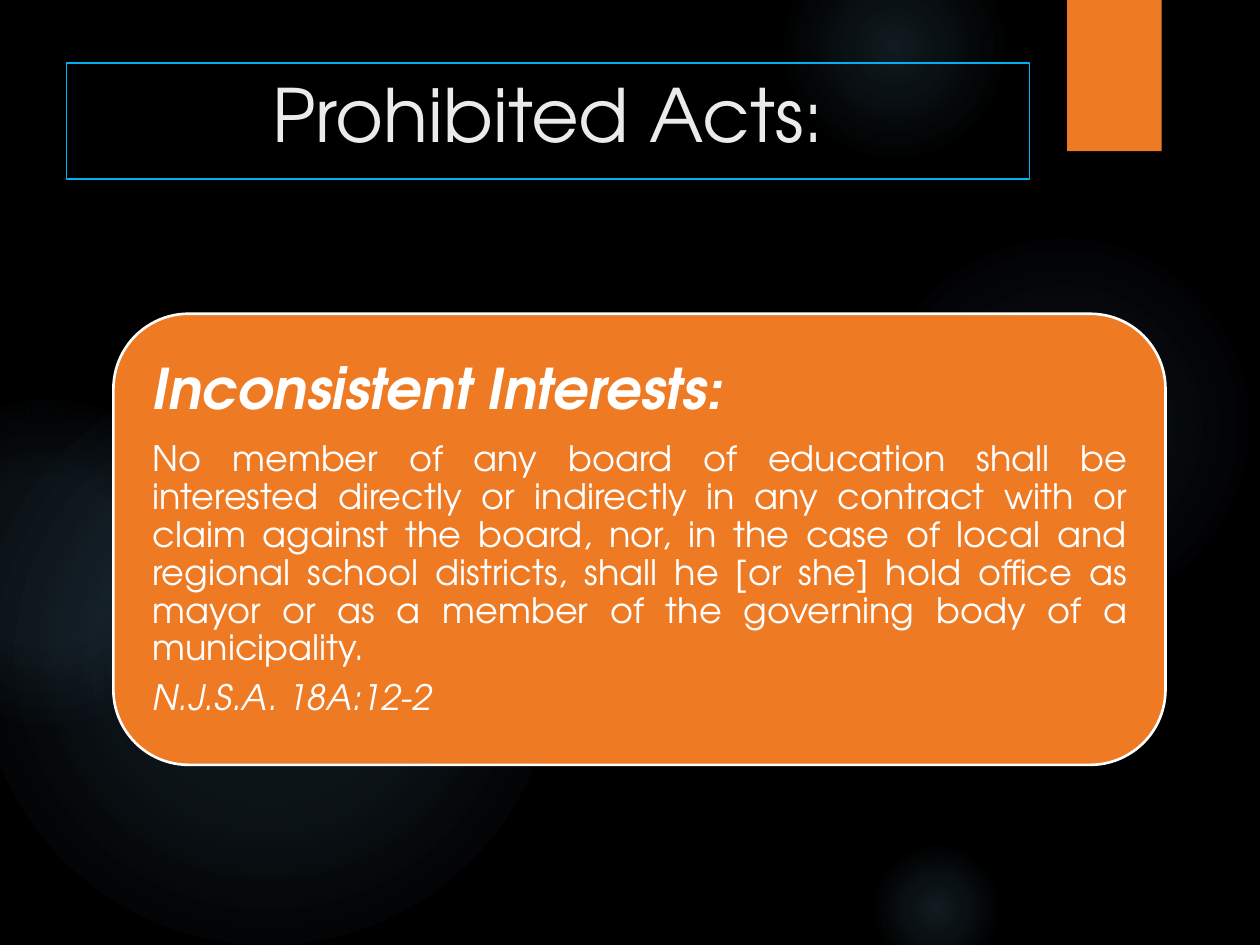
from dataclasses import dataclass

from lxml import etree
from pptx import Presentation
from pptx.dml.color import RGBColor
from pptx.enum import shapes, text
from pptx.oxml import parse_xml
from pptx.oxml.ns import nsdecls
from pptx.util import Inches, Pt

FONT = "TeX Gyre Adventor"
ORANGE, WHITE, GLOW = "EF7A24", "FFFFFF", "7AC4F0"


@dataclass
class Orb:
    """A round glow; stops are (position %, opacity %) from the centre out."""
    left: float
    top: float
    size: float
    stops: tuple


ORBS = [
    Orb(6.89, 1.83, 3.08, ((0, 7), (36, 6), (69, 0))),
    Orb(6.22, -0.5, 1.75, ((0, 14), (36, 7), (73, 0))),
    Orb(6.89, 6.67, 1.08, ((0, 14), (36, 7), (66, 0))),
    Orb(-0.17, 2.92, 4.58, ((0, 11), (36, 10), (75, 0))),
    Orb(-0.92, 3.17, 2.58, ((0, 8), (36, 8), (72, 0))),
]


def rgb(value: str) -> RGBColor:
    return RGBColor.from_string(value)


def place(sp, left: float, top: float, width: float, height: float):
    sp.left, sp.top = Inches(left), Inches(top)
    sp.width, sp.height = Inches(width), Inches(height)


def add_shape(s, kind, box: tuple, fill: str = ORANGE, line: str = "", weight: float = 1.5):
    sp = s.shapes.add_shape(kind, *map(Inches, box))
    sp.shadow.inherit = False
    sp.fill.solid()
    sp.fill.fore_color.rgb = rgb(fill)
    if line:
        sp.line.color.rgb = rgb(line)
        sp.line.width = Pt(weight)
    else:
        sp.line.fill.background()
    return sp


def add_orb(s, orb: Orb):
    sp = add_shape(s, shapes.MSO_SHAPE.OVAL, (orb.left, orb.top, orb.size, orb.size), GLOW)
    stops = "".join(
        f'<a:gs pos="{pos * 1000}"><a:srgbClr val="{GLOW}">'
        f'<a:alpha val="{alpha * 1000}"/></a:srgbClr></a:gs>'
        for pos, alpha in orb.stops)
    grad = parse_xml(
        f'<a:gradFill {nsdecls("a")}><a:gsLst>{stops}</a:gsLst><a:path path="circle">'
        '<a:fillToRect l="50000" t="50000" r="50000" b="50000"/></a:path></a:gradFill>')
    props = sp.element.spPr
    props.replace(props.find("{*}solidFill"), grad)


def add_shadow(sp):
    effects = sp.element.spPr.find("{*}effectLst")
    effects.append(parse_xml(
        f'<a:outerShdw {nsdecls("a")} blurRad="{Pt(3)}" dist="{Pt(2)}" dir="5400000">'
        '<a:srgbClr val="000000"><a:alpha val="45000"/></a:srgbClr></a:outerShdw>'))


def write(p, words: str, size: float, color: str = WHITE, bold: bool = False,
          italic: bool = False, align=text.PP_ALIGN.JUSTIFY, spacing: float = 0.9,
          after: float = 0):
    p.alignment, p.line_spacing = align, spacing
    p.space_before, p.space_after = Pt(0), Pt(after)
    props = p._p.get_or_add_pPr()
    props.set("marL", "0")
    props.set("indent", "0")
    etree.SubElement(props, "{http://schemas.openxmlformats.org/drawingml/2006/main}buNone")
    r = p.add_run()
    r.text = words
    f = r.font
    f.name, f.size, f.bold, f.italic = FONT, Pt(size), bold, italic
    f.color.rgb = rgb(color)


def bring_to_front(sp):
    sp.element.getparent().append(sp.element)


def add_title(s):
    title = s.shapes.title
    place(title, 0.53, 0.5, 7.64, 0.92)
    title.line.color.rgb = rgb("00B0F0")
    title.line.width = Pt(0.75)
    tf = title.text_frame
    tf.auto_size = text.MSO_AUTO_SIZE.NONE
    tf.vertical_anchor = text.MSO_ANCHOR.TOP
    write(tf.paragraphs[0], "Prohibited Acts:", 42, color="EBEBEB",
          align=text.PP_ALIGN.CENTER, spacing=1.0)
    bring_to_front(title)


def add_statute(s):
    add_shape(s, shapes.MSO_SHAPE.ROUNDED_RECTANGLE, (0.9, 2.49, 8.35, 3.58), line=WHITE)
    body = s.placeholders[1]
    place(body, 1.08, 2.67, 8, 3.23)
    tf = body.text_frame
    tf.auto_size = text.MSO_AUTO_SIZE.NONE
    tf.vertical_anchor = text.MSO_ANCHOR.MIDDLE
    tf.margin_left = tf.margin_right = tf.margin_top = tf.margin_bottom = Inches(0.13)
    write(tf.paragraphs[0], "Inconsistent Interests:", 32, bold=True, italic=True, after=11.2)
    write(tf.add_paragraph(),
          "No member of any board of education shall be interested directly or indirectly "
          "in any contract with or claim against the board, nor, in the case of local and "
          "regional school districts, shall he [or she] hold office as mayor or as a member "
          "of the governing body of a municipality.", 20, after=7)
    write(tf.add_paragraph(), "N.J.S.A. 18A:12-2", 20, italic=True, after=7)
    bring_to_front(body)


def main():
    prs = Presentation()
    prs.slide_width, prs.slide_height = Inches(10), Inches(7.5)
    s = prs.slides.add_slide(prs.slide_layouts[1])
    s.background.fill.solid()
    s.background.fill.fore_color.rgb = rgb("000000")
    for orb in ORBS:
        add_orb(s, orb)
    add_shadow(add_shape(s, shapes.MSO_SHAPE.RECTANGLE, (8.47, 0, 0.75, 1.2)))
    add_title(s)
    add_statute(s)
    prs.save("out.pptx")


if __name__ == "__main__":
    main()
